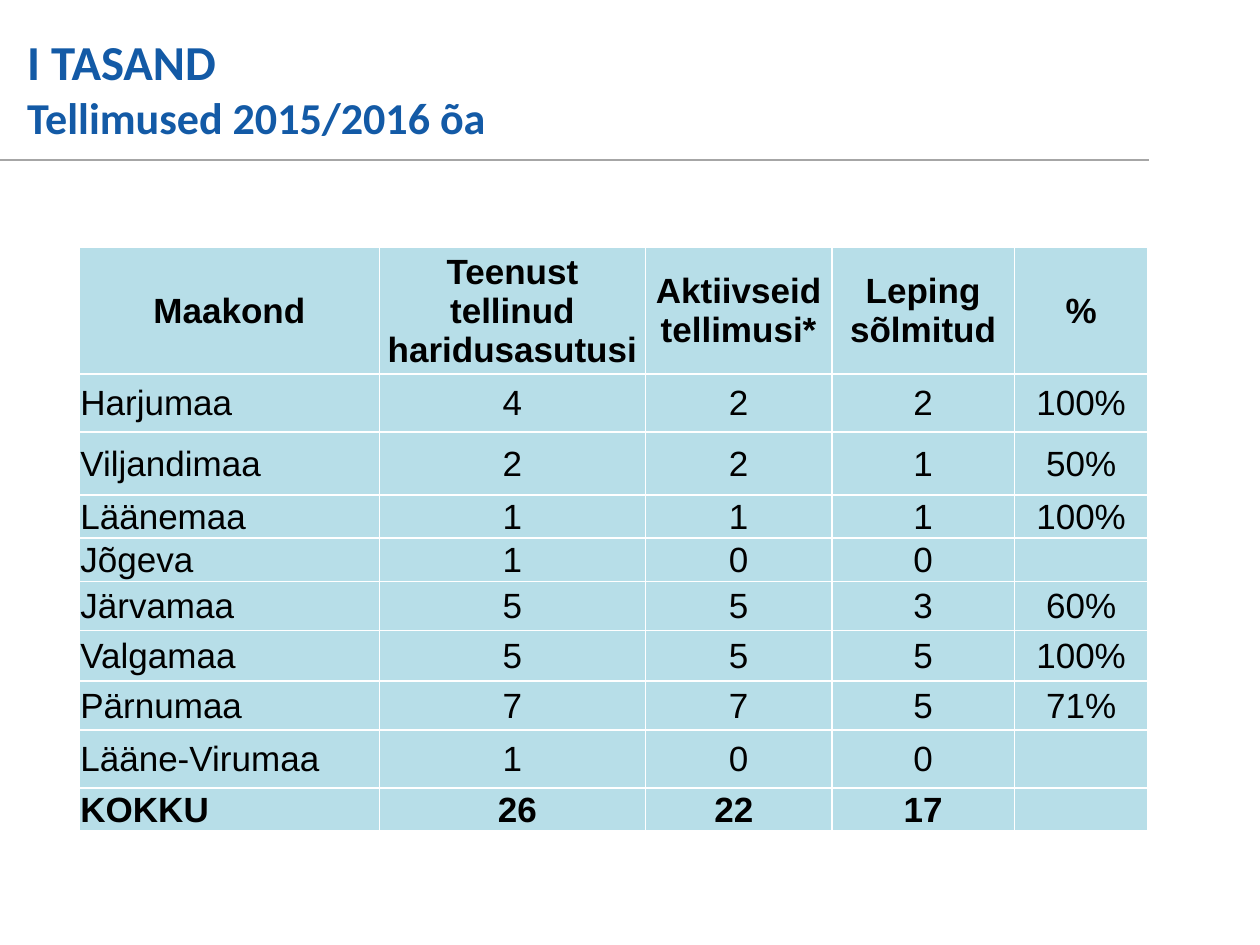
import pptx
import pptx.dml.color
import pptx.enum.shapes
import pptx.enum.text
import pptx.oxml
import pptx.oxml.ns
import pptx.util
from pptx.util import Cm

COLORS = {
    "title": "135AA6",
    "rule": "A6A6A6",
    "text": "000000",
    "cell": "B7DEE8",
    "border": "FFFFFF",
}
TITLE_FORMAT = {"name": "Calibri", "bold": True}
BODY_FORMAT = {"name": "Arial", "size": pptx.util.Pt(20), "bold": False}
BOLD_FORMAT = {**BODY_FORMAT, "bold": True}
CELL_FORMAT = {
    "margin_left": Cm(0.02),
    "margin_right": Cm(0.02),
    "margin_top": Cm(0.02),
    "margin_bottom": Cm(0),
    "vertical_anchor": pptx.enum.text.MSO_ANCHOR.MIDDLE,
}
COLUMN_WIDTHS = [6.05, 5.36, 3.76, 3.68, 2.69]
ROW_HEIGHTS = [2.37, 1.17, 1.27, 0.81, 0.81, 0.99, 1.02, 0.99, 1.17, 0.81]
ORDERS = [
    ["Maakond", "Teenust tellinud haridusasutusi", "Aktiivseid tellimusi*",
     "Leping sõlmitud", "%"],
    ["Harjumaa", "4", "2", "2", "100%"],
    ["Viljandimaa", "2", "2", "1", "50%"],
    ["Läänemaa", "1", "1", "1", "100%"],
    ["Jõgeva", "1", "0", "0", ""],
    ["Järvamaa", "5", "5", "3", "60%"],
    ["Valgamaa", "5", "5", "5", "100%"],
    ["Pärnumaa", "7", "7", "5", "71%"],
    ["Lääne-Virumaa", "1", "0", "0", ""],
    ["KOKKU", " 26", "22 ", "17", ""],
]


def rgb(name):
    return pptx.dml.color.RGBColor.from_string(COLORS[name])


def set_attributes(target, values):
    for name, value in values.items():
        setattr(target, name, value)


def set_font(font, values, color):
    set_attributes(font, values)
    font.color.rgb = rgb(color)


def add_rule(slide):
    rule = slide.shapes.add_connector(
        pptx.enum.shapes.MSO_CONNECTOR.STRAIGHT,
        Cm(-0.51), Cm(3.22), Cm(23.17), Cm(3.22))
    rule.line.color.rgb = rgb("rule")
    rule.line.width = pptx.util.Pt(1)
    properties = rule._element.spPr
    properties.append(pptx.oxml.parse_xml(
        f"<a:effectLst {pptx.oxml.ns.nsdecls('a')}/>"))


def add_title(slide, lines):
    """Add the title as one paragraph of (text, size) lines."""
    box = slide.shapes.add_textbox(Cm(0.3), Cm(0.56), Cm(21.13), Cm(2.41))
    frame = box.text_frame
    frame.word_wrap = True
    frame.vertical_anchor = pptx.enum.text.MSO_ANCHOR.MIDDLE
    paragraph = frame.paragraphs[0]
    for index, (text, size) in enumerate(lines):
        if index:
            paragraph.add_line_break()
        run = paragraph.add_run()
        run.text = text
        set_font(run.font, {**TITLE_FORMAT, "size": pptx.util.Pt(size)}, "title")


def add_borders(cell):
    """Put borders ahead of the fill, as the schema asks."""
    properties = cell._tc.get_or_add_tcPr()
    for index, side in enumerate(("lnL", "lnR", "lnT", "lnB")):
        properties.insert(index, pptx.oxml.parse_xml(
            f"<a:{side} {pptx.oxml.ns.nsdecls('a')} w='12700'><a:solidFill>"
            f"<a:srgbClr val='{COLORS['border']}'/></a:solidFill></a:{side}>"))


def fill_cell(cell, text, values, alignment):
    set_attributes(cell, CELL_FORMAT)
    cell.fill.solid()
    cell.fill.fore_color.rgb = rgb("cell")
    add_borders(cell)
    cell.text = text
    paragraph = cell.text_frame.paragraphs[0]
    paragraph.alignment = alignment
    set_font(paragraph.font, values, "text")
    for run in paragraph.runs:
        set_font(run.font, values, "text")


def add_orders_table(slide):
    table = slide.shapes.add_table(
        len(ORDERS), len(COLUMN_WIDTHS), Cm(1.6), Cm(4.98),
        Cm(sum(COLUMN_WIDTHS)), Cm(sum(ROW_HEIGHTS))).table
    set_attributes(table, {"first_row": False, "horz_banding": False})
    for column, width in zip(table.columns, COLUMN_WIDTHS):
        column.width = Cm(width)
    for row, height in zip(table.rows, ROW_HEIGHTS):
        row.height = Cm(height)
    header, total = 0, len(ORDERS) - 1
    for row_index, texts in enumerate(ORDERS):
        values = BOLD_FORMAT if row_index in (header, total) else BODY_FORMAT
        for column_index, text in enumerate(texts):
            is_county = column_index == 0 and row_index != header
            alignment = (pptx.enum.text.PP_ALIGN.LEFT if is_county
                         else pptx.enum.text.PP_ALIGN.CENTER)
            fill_cell(table.cell(row_index, column_index), text, values, alignment)


def main():
    presentation = pptx.Presentation()
    presentation.slide_width = Cm(25.4)
    presentation.slide_height = Cm(19.05)
    slide = presentation.slides.add_slide(presentation.slide_layouts[6])
    add_rule(slide)
    add_title(slide, [("I TASAND", 27.9), ("Tellimused 2015/2016 õa", 25.2)])
    add_orders_table(slide)
    presentation.save("out.pptx")


if __name__ == "__main__":
    main()
